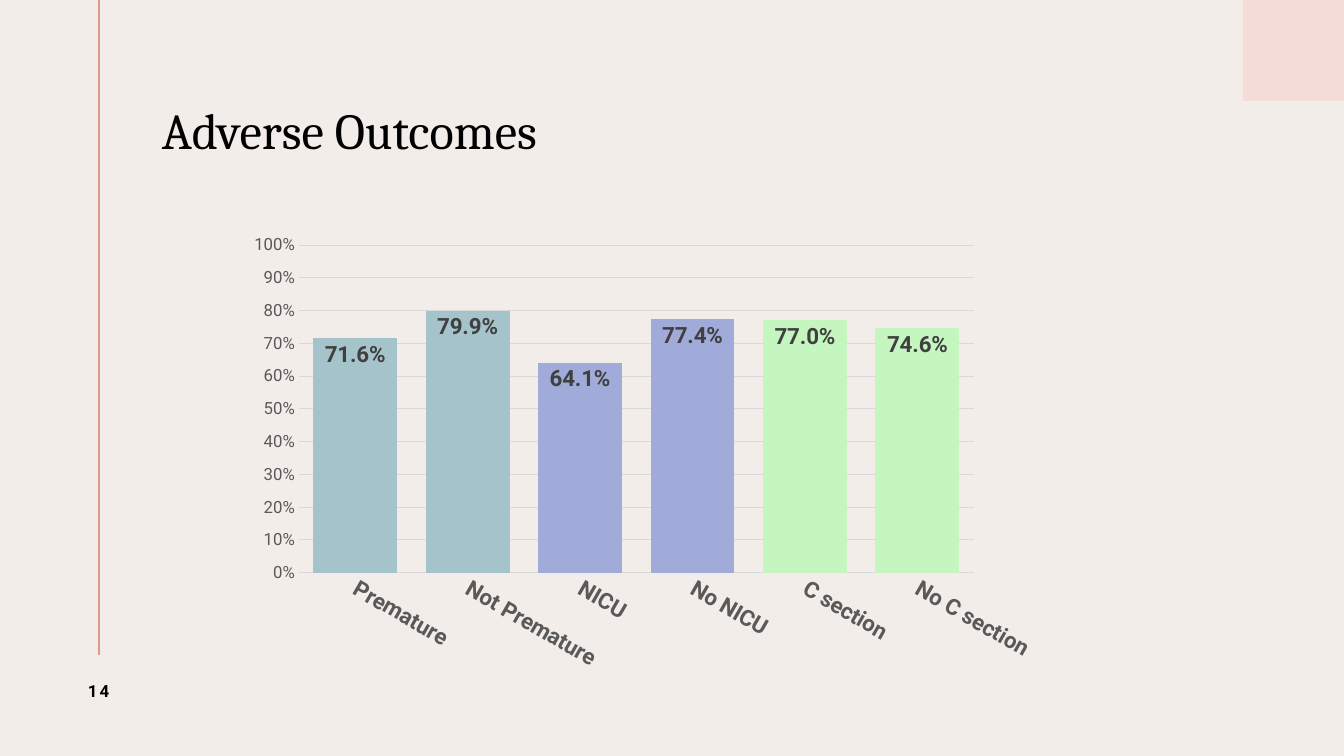
from dataclasses import dataclass

from lxml.etree import SubElement
from pptx import Presentation
from pptx.chart.data import CategoryChartData
from pptx.dml.color import RGBColor
from pptx.enum.chart import XL_CHART_TYPE as ChartType
from pptx.enum.chart import XL_LABEL_POSITION as LabelPosition
from pptx.enum.chart import XL_TICK_MARK as TickMark
from pptx.enum.shapes import MSO_CONNECTOR as Connector
from pptx.enum.shapes import MSO_SHAPE as Shape
from pptx.enum.text import MSO_ANCHOR as Anchor
from pptx.enum.text import PP_ALIGN as Align
from pptx.oxml.ns import qn
from pptx.util import Pt

EMU_PER_PX = 914400 / 100.8


def px(length):
    return round(length * EMU_PER_PX)


def rgb(code):
    return RGBColor.from_string(code)


@dataclass(frozen=True)
class Theme:
    background: str = "F3EDEA"
    corner: str = "F4DDD8"
    rule: str = "DF998B"
    ink: str = "000000"
    axis_text: str = "595959"
    value_text: str = "404040"
    grid: str = "D9D9D9"
    bars: tuple = ("A5C3CA", "A0ABD9", "C6F6C0")
    heading_font: str = "Cambria"
    body_font: str = "Roboto"
    title_size: int = 36
    label_size: int = 16
    small_size: int = 12
    chart_size: int = 10


class SlideBuilder:
    def __init__(self, slide, theme):
        self.slide = slide
        self.theme = theme
        slide.background.fill.solid()
        slide.background.fill.fore_color.rgb = rgb(theme.background)

    def style(self, font, name, size, color, bold=False):
        font.name, font.size, font.bold = name, Pt(size), bold
        font.color.rgb = rgb(color)

    def block(self, left, top, width, height, color):
        shape = self.slide.shapes.add_shape(
            Shape.RECTANGLE, px(left), px(top), px(width), px(height))
        shape.shadow.inherit = False
        shape.fill.solid()
        shape.fill.fore_color.rgb = rgb(color)
        shape.line.fill.background()

    def line(self, x1, y1, x2, y2, color, weight):
        line = self.slide.shapes.add_connector(
            Connector.STRAIGHT, px(x1), px(y1), px(x2), px(y2))
        line.line.color.rgb = rgb(color)
        line.line.width = Pt(weight)
        SubElement(line._element.spPr, qn("a:effectLst"))

    def text(self, left, top, width, height, words, font, size,
             align=Align.LEFT, bold=False, tracking=0, line_spacing=1.0, inset=10):
        box = self.slide.shapes.add_textbox(px(left), px(top), px(width), px(height))
        frame = box.text_frame
        frame.word_wrap = True
        frame.vertical_anchor = Anchor.MIDDLE
        frame.margin_left = px(inset)
        paragraph = frame.paragraphs[0]
        paragraph.alignment = align
        paragraph.line_spacing = line_spacing
        run = paragraph.add_run()
        run.text = words
        self.style(run.font, font, size, self.theme.ink, bold)
        if tracking:
            run._r.get_or_add_rPr().set("spc", str(round(tracking * 100)))

    def column_chart(self, left, top, width, height, outcomes, plot_area):
        theme = self.theme
        data = CategoryChartData(number_format="0.0%")
        data.categories = list(outcomes)
        data.add_series("Series 1", list(outcomes.values()))
        chart = self.slide.shapes.add_chart(
            ChartType.COLUMN_CLUSTERED, px(left), px(top), px(width), px(height), data).chart
        chart.has_legend = chart.has_title = False
        self.style(chart.font, theme.body_font, theme.chart_size, theme.ink)

        # Columns, coloured in pairs
        plot = chart.plots[0]
        plot.gap_width = 34
        plot.vary_by_categories = False
        for index in range(len(outcomes)):
            fill = plot.series[0].points[index].format.fill
            fill.solid()
            fill.fore_color.rgb = rgb(theme.bars[index // 2])

        # Value labels
        plot.has_data_labels = True
        labels = plot.data_labels
        labels.show_value = True
        labels.position = LabelPosition.INSIDE_END
        labels.number_format, labels.number_format_is_linked = "0.0%", False
        self.style(labels.font, theme.body_font, theme.label_size, theme.value_text, True)

        # Axes
        categories, values = chart.category_axis, chart.value_axis
        for axis, size, bold in ((categories, theme.label_size, True),
                                 (values, theme.small_size, False)):
            axis.major_tick_mark = axis.minor_tick_mark = TickMark.NONE
            self.style(axis.tick_labels.font, theme.body_font, size, theme.axis_text, bold)
        values.minimum_scale, values.maximum_scale, values.major_unit = 0, 1, 0.1
        values.tick_labels.number_format = "0%"
        values.tick_labels.number_format_is_linked = False
        values.format.line.fill.background()
        for line in (categories.format.line, values.major_gridlines.format.line):
            line.color.rgb = rgb(theme.grid)
            line.width = Pt(0.75)

        # Slanted category names
        body = categories._element.find(qn("c:txPr")).find(qn("a:bodyPr"))
        body.set("rot", str(30 * 60000))
        body.set("vert", "horz")
        self.place_plot(chart, plot_area)

    def place_plot(self, chart, plot_area):
        area = chart._chartSpace.chart.plotArea
        layout = area.find(qn("c:layout"))
        if layout is None:
            layout = SubElement(area, qn("c:layout"))
            area.insert(0, layout)
        manual = SubElement(layout, qn("c:manualLayout"))
        settings = [("layoutTarget", "inner"), ("xMode", "edge"), ("yMode", "edge")]
        settings += zip("xywh", plot_area)
        for name, value in settings:
            SubElement(manual, qn(f"c:{name}")).set("val", str(value))


def main():
    theme = Theme()
    presentation = Presentation()
    presentation.slide_width, presentation.slide_height = px(1344), px(756)
    slide = presentation.slides.add_slide(presentation.slide_layouts[6])
    builder = SlideBuilder(slide, theme)

    # Decoration
    builder.block(1243, 0, 101, 101, theme.corner)
    builder.line(99, 0, 99, 655, theme.rule, 1.5)

    # Title and page number
    builder.text(162, 55, 1082, 157, "Adverse Outcomes", theme.heading_font,
                 theme.title_size, line_spacing=0.9, inset=0)
    builder.text(45, 655, 107, 72, "14", theme.body_font, theme.small_size,
                 align=Align.CENTER, bold=True, tracking=1.5)

    # Outcome rates
    outcomes = {
        "Premature": 0.716,
        "Not Premature": 0.799,
        "NICU": 0.641,
        "No NICU": 0.774,
        "C section": 0.77,
        "No C section": 0.746,
    }
    builder.column_chart(242, 227, 813, 455, outcomes, plot_area=(0.07, 0.04, 0.83, 0.72))

    presentation.save("out.pptx")


if __name__ == "__main__":
    main()
